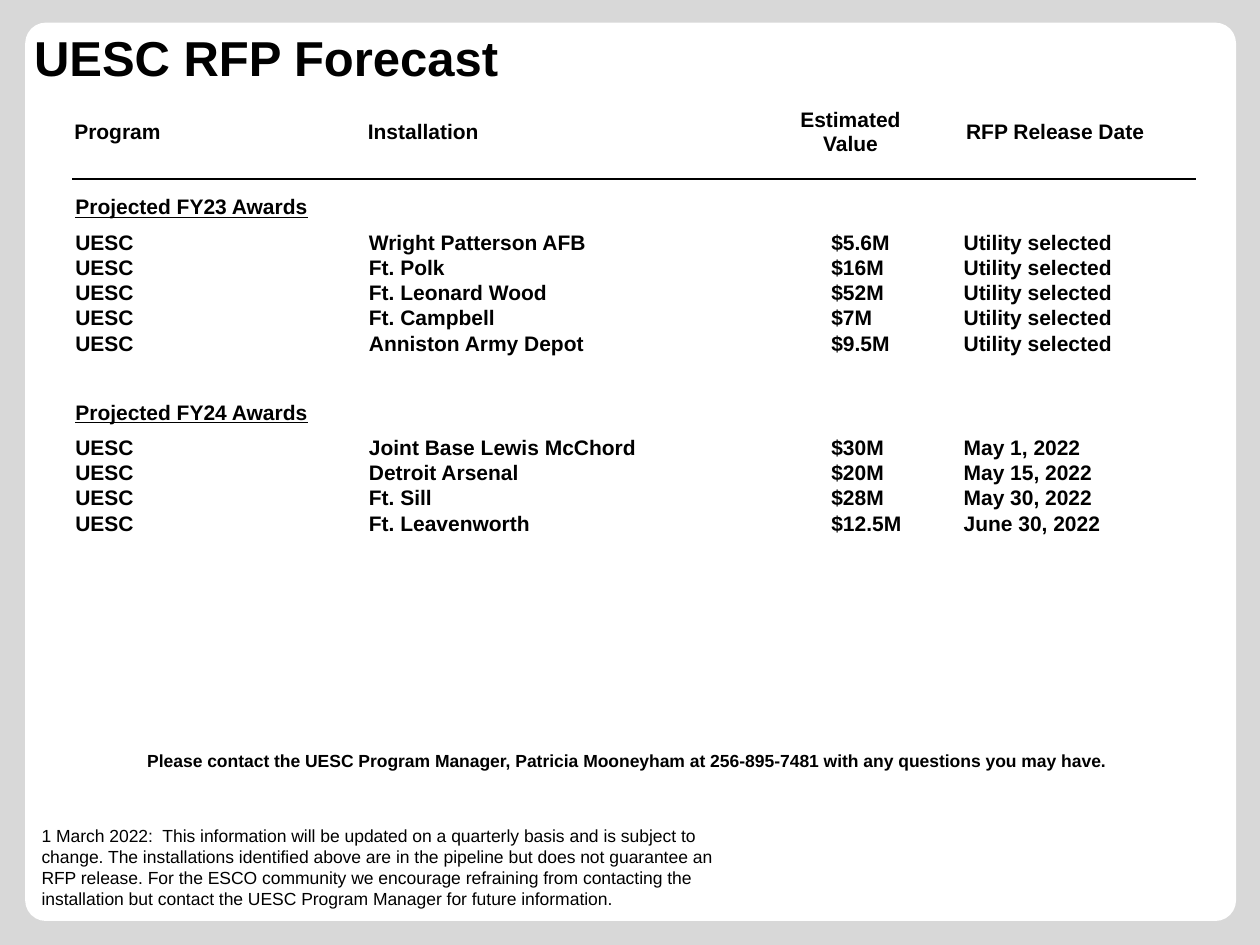
from lxml.etree import SubElement
from pptx import Presentation
from pptx.dml.color import RGBColor
from pptx.enum.shapes import MSO_SHAPE
from pptx.enum.text import MSO_ANCHOR as Anchor, MSO_AUTO_SIZE as AutoSize, PP_ALIGN as Align
from pptx.oxml.ns import qn
from pptx.util import Inches, Pt

BLACK = RGBColor(0x00, 0x00, 0x00)
WHITE = RGBColor(0xFF, 0xFF, 0xFF)
GREY = RGBColor(0xD8, 0xD8, 0xD8)

COLUMNS = [("Program", 2.33, Align.LEFT), ("Installation", 3.33, Align.LEFT),
           ("Estimated Value", 1.02, Align.CENTER), ("RFP Release Date", 2.23, Align.CENTER)]
ROW_HEIGHTS = [0.75, 1.16, 1.16, 1.16, 1.16]
AWARD_TABS = [2.33, 6.0, 7.05]
FY23_AWARDS = [
    ("Wright Patterson AFB", "$5.6M", "Utility selected"),
    ("Ft. Polk", "$16M", "Utility selected"),
    ("Ft. Leonard Wood", "$52M", "Utility selected"),
    ("Ft. Campbell", "$7M", "Utility selected"),
    ("Anniston Army Depot", "$9.5M", "Utility selected"),
]
FY24_AWARDS = [
    ("Joint Base Lewis McChord", "$30M", "May 1, 2022"),
    ("Detroit Arsenal", "$20M", "May 15, 2022"),
    ("Ft. Sill", "$28M", "May 30, 2022"),
    ("Ft. Leavenworth", "$12.5M", "June 30, 2022"),
]
CONTACT = ("Please contact the UESC Program Manager, Patricia Mooneyham at 256-895-7481 "
           "with any questions you may have.")
DISCLAIMER = ("1 March 2022:  This information will be updated on a quarterly basis and is subject to "
              "change. The installations identified above are in the pipeline but does not guarantee an "
              "RFP release. For the ESCO community we encourage refraining from contacting the "
              "installation but contact the UESC Program Manager for future information.")


def set_font(paragraph, size, bold=True, underline=None):
    """Apply the slide's typeface to a paragraph."""
    font = paragraph.font
    font.name, font.size, font.bold, font.underline = "Arial", Pt(size), bold, underline
    font.color.rgb = BLACK


def place(shape, box):
    """Move and size a shape to a box in inches."""
    shape.left, shape.top, shape.width, shape.height = map(Inches, box)


def add_panel(slide, box):
    """Put the rounded white panel behind everything else."""
    panel = slide.shapes.add_shape(MSO_SHAPE.ROUNDED_RECTANGLE, *map(Inches, box))
    panel.adjustments[0] = 0.023
    panel.shadow.inherit = False
    panel.fill.solid()
    panel.fill.fore_color.rgb = WHITE
    panel.line.fill.background()
    slide.shapes._spTree.insert(2, panel._element)


def set_title(slide, box, text):
    """Fill and format the title placeholder."""
    title = slide.shapes.title
    place(title, box)
    frame = title.text_frame
    frame.text = text
    frame.word_wrap = False
    frame.auto_size = AutoSize.SHAPE_TO_FIT_TEXT
    frame.vertical_anchor = Anchor.TOP
    frame.paragraphs[0].alignment = Align.LEFT
    set_font(frame.paragraphs[0], 28)


def add_text(slide, box, lines, size, bold=True, underline=None, tabs=()):
    """Add a wrapping text box with one paragraph per line."""
    frame = slide.shapes.add_textbox(*map(Inches, box)).text_frame
    frame.word_wrap = True
    frame.auto_size = AutoSize.SHAPE_TO_FIT_TEXT
    frame.text = "\n".join(lines)
    for paragraph in frame.paragraphs:
        if tabs:
            tab_list = SubElement(paragraph._p.get_or_add_pPr(), qn("a:tabLst"))
            for position in tabs:
                SubElement(tab_list, qn("a:tab"), pos=str(Inches(position)), algn="l")
        set_font(paragraph, size, bold, underline)
    return frame


def set_borders(cell, top, bottom):
    """Draw one-point borders, white at the sides."""
    properties = cell._tc.get_or_add_tcPr()
    for side, color in (("L", WHITE), ("R", WHITE), ("T", top), ("B", bottom)):
        line = SubElement(properties, qn(f"a:ln{side}"), w=str(Pt(1)))
        SubElement(SubElement(line, qn("a:solidFill")), qn("a:srgbClr"), val=str(color))


def add_forecast_table(slide, box):
    """Add the ruled table that carries the column headings."""
    table = slide.shapes.add_table(len(ROW_HEIGHTS), len(COLUMNS), *map(Inches, box)).table
    table.first_row = table.horz_banding = False
    for row, height in zip(table.rows, ROW_HEIGHTS):
        row.height = Inches(height)
    for index, (heading, width, alignment) in enumerate(COLUMNS):
        table.columns[index].width = Inches(width)
        for row in range(len(ROW_HEIGHTS)):
            cell = table.cell(row, index)
            set_borders(cell, BLACK if row == 1 else WHITE, BLACK if row == 0 else WHITE)
            cell.fill.background()
        header = table.cell(0, index)
        header.text = heading
        header.vertical_anchor = Anchor.MIDDLE
        header.margin_left = header.margin_top = header.margin_right = Inches(0.01)
        header.margin_bottom = 0
        header.text_frame.paragraphs[0].alignment = alignment
        set_font(header.text_frame.paragraphs[0], 12)


def add_awards(slide, box, heading, awards):
    """Add a year's underlined heading and its award lines."""
    left, top, width, height = box
    add_text(slide, (left, top, 2.92, 0.3), [heading], 12, underline=True)
    lines = ["\t".join(("UESC", *award)) for award in awards]
    add_text(slide, (left, top + 0.28, width, height - 0.28), lines, 12, tabs=AWARD_TABS)


def add_disclaimer(slide, box):
    """Add the dated note at the foot of the panel."""
    frame = add_text(slide, box, [DISCLAIMER], 10, bold=False)
    frame.margin_left = frame.margin_right = 0


def main():
    """Build and save the forecast slide."""
    presentation = Presentation()
    presentation.slide_width, presentation.slide_height = Inches(10), Inches(7.5)
    slide = presentation.slides.add_slide(presentation.slide_layouts[5])
    slide.background.fill.solid()
    slide.background.fill.fore_color.rgb = GREY
    add_panel(slide, (0.2, 0.18, 9.61, 7.13))
    add_disclaimer(slide, (0.33, 6.5, 5.5, 0.94))
    set_title(slide, (0.17, 0.17, 3.93, 0.57), "UESC RFP Forecast")
    add_forecast_table(slide, (0.58, 0.67, 8.92, 5.39))
    add_awards(slide, (0.5, 1.49, 9.17, 1.59), "Projected FY23 Awards", FY23_AWARDS)
    add_awards(slide, (0.5, 3.12, 9.17, 1.39), "Projected FY24 Awards", FY24_AWARDS)
    add_text(slide, (1.07, 5.9, 8.83, 0.27), [CONTACT], 10)
    presentation.save("out.pptx")


if __name__ == "__main__":
    main()
